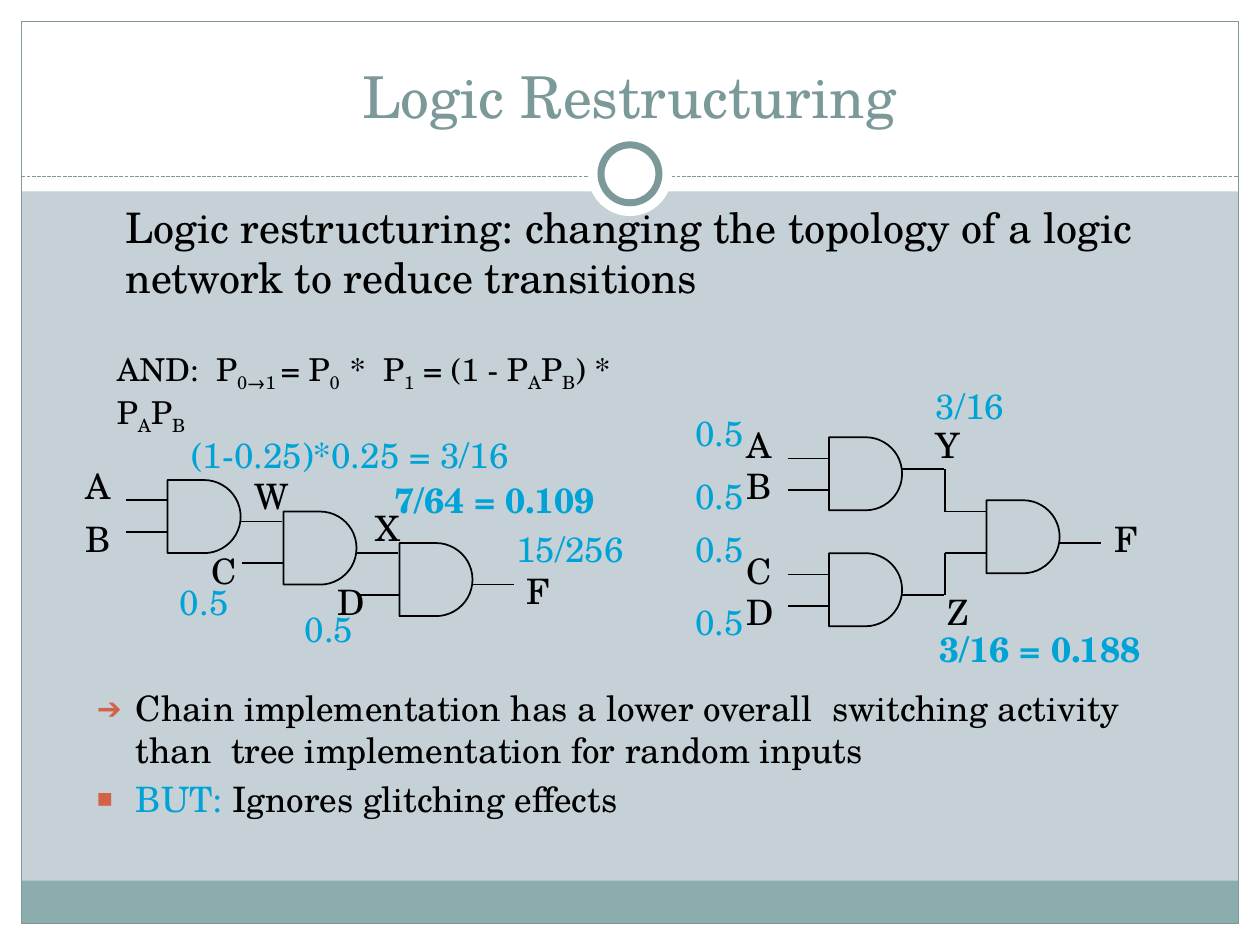
from dataclasses import dataclass

from lxml import etree
from pptx import Presentation
from pptx import util as u
from pptx.dml.color import RGBColor
from pptx.enum import dml, shapes, text
from pptx.oxml.ns import qn

Inches = u.Inches


@dataclass(frozen=True)
class Theme:
    font: str = "TeX Gyre Schola"
    paper: str = "C5D1D7"
    white: str = "FFFFFF"
    band: str = "8CADAE"
    frame: str = "7C999A"
    ink: str = "000000"
    accent: str = "00A3D6"
    bullet: str = "D16349"
    title: int = 33
    lead: int = 24
    body: int = 20
    formula: int = 18
    thin: float = 0.75
    wire: float = 1
    ring: float = 4


T = Theme()
GATE = 0.58
LEAD = 0.33


def rgb(value):
    return RGBColor.from_string(value)


def add_shape(slide, kind, box, fill=None, line=None, width=T.thin):
    sp = slide.shapes.add_shape(kind, *map(Inches, box))
    sp.shadow.inherit = False
    if fill:
        sp.fill.solid()
        sp.fill.fore_color.rgb = rgb(fill)
    else:
        sp.fill.background()
    if line:
        sp.line.color.rgb = rgb(line)
        sp.line.width = u.Pt(width)
    else:
        sp.line.fill.background()
    return sp


def add_line(slide, x1, y1, x2, y2, color=T.ink, width=T.wire):
    cx = slide.shapes.add_connector(
        shapes.MSO_CONNECTOR.STRAIGHT, *map(Inches, (x1, y1, x2, y2)))
    cx.line.color.rgb = rgb(color)
    cx.line.width = u.Pt(width)
    etree.SubElement(cx._element.spPr, qn("a:effectLst"))
    return cx


def add_text_frame(slide, box, wrap=True):
    tf = slide.shapes.add_textbox(*map(Inches, box)).text_frame
    tf.word_wrap = wrap
    return tf


def add_run(p, words, size, color=T.ink, bold=False):
    r = p.add_run()
    r.text = words
    r.font.name = T.font
    r.font.size = u.Pt(size)
    r.font.color.rgb = rgb(color)
    r.font.bold = bold
    return r


def set_indent(p, hanging=0, bullet=None, scale=100):
    pPr = p._p.get_or_add_pPr()
    pPr.set("marL", str(Inches(0.31)))
    pPr.set("indent", str(-Inches(hanging)))
    if bullet:
        color = etree.SubElement(pPr, qn("a:buClr"))
        etree.SubElement(color, qn("a:srgbClr"), val=T.bullet)
        etree.SubElement(pPr, qn("a:buSzPct"), val=str(scale * 1000))
        etree.SubElement(pPr, qn("a:buFont"), typeface=T.font)
        etree.SubElement(pPr, qn("a:buChar"), char=bullet)


def add_names(slide, left, top, names):
    for name, x, y in names:
        tf = add_text_frame(slide, (left + x, top + y, 0.4, 0.43), wrap=False)
        add_run(tf.paragraphs[0], name, T.body)


def add_values(slide, left, top, values):
    for value, x, y, w, bold in values:
        tf = add_text_frame(slide, (left + x, top + y, w, 0.43))
        add_run(tf.paragraphs[0], value, T.body, T.accent, bold)


def add_gate(slide, x, y, inputs, output):
    add_shape(slide, shapes.MSO_SHAPE.FLOWCHART_DELAY, (x, y, GATE, GATE),
              line=T.ink, width=T.wire)
    for dy in inputs:
        add_line(slide, x - LEAD, y + dy, x, y + dy)
    add_line(slide, x + GATE, y + output, x + GATE + LEAD, y + output)


def add_frame(slide, box):
    left, top, width, height = box
    right, bottom = left + width, top + height
    rect, oval = shapes.MSO_SHAPE.RECTANGLE, shapes.MSO_SHAPE.OVAL
    edge, head = 0.17, 1.52
    for part in ((left, bottom - edge, width, edge), (left, top, width, head),
                 (left, top, edge, height), (right - edge, top, edge, height)):
        add_shape(slide, rect, part, T.white)
    inner = width - 2 * edge
    add_shape(slide, rect, (left + edge, bottom - edge - 0.34, inner, 0.34), T.band)
    add_shape(slide, rect, (left + edge, top + edge, inner, height - 2 * edge),
              line=T.frame)
    rule = add_line(slide, left + edge, top + 1.4, right - edge, top + 1.4,
                    T.frame, T.thin)
    rule.line.dash_style = dml.MSO_LINE.SQUARE_DOT
    for size, line in ((0.67, None), (0.46, T.frame)):
        spot = (left + (width - size) / 2, top + 1.38 - size / 2, size, size)
        add_shape(slide, oval, spot, T.white, line, T.ring)


def add_title(slide, box):
    tf = add_text_frame(slide, box)
    tf.vertical_anchor = text.MSO_ANCHOR.BOTTOM
    p = tf.paragraphs[0]
    p.alignment = text.PP_ALIGN.CENTER
    add_run(p, "Logic Restructuring", T.title, T.frame)


def add_lead(slide, box):
    p = add_text_frame(slide, box).paragraphs[0]
    set_indent(p)
    add_run(p, "Logic restructuring: changing the topology of a logic "
               "network to reduce transitions", T.lead)


def add_formula(slide, box):
    p = add_text_frame(slide, box).paragraphs[0]
    parts = (("AND:  P", "0→1 "), ("= P", "0  "), ("*  P", "1"), (" = (1 - P", "A"),
             ("P", "B"), (") * P", "A"), ("P", "B"))
    for base, subscript in parts:
        add_run(p, base, T.formula)
        r = add_run(p, subscript, T.formula)
        r.font._element.set("baseline", "-25000")


def add_chain(slide, box):
    left, top = box[:2]
    for i in range(3):
        inputs = (0.41,) if i else (0.16, 0.41)
        add_gate(slide, left + 0.75 + 0.92 * i, top + 0.42 + 0.25 * i, inputs, 0.33)
    add_names(slide, left, top, (
        ("A", 0, 0.25), ("B", 0, 0.67), ("C", 1, 0.92), ("D", 2, 1.17),
        ("F", 3.5, 1.08), ("W", 1.34, 0.33), ("X", 2.3, 0.58)))
    add_values(slide, left, top, (
        ("(1-0.25)*0.25 = 3/16", 0.84, 0, 3.08, False),
        ("0.5", 0.75, 1.17, 0.75, False), ("0.5", 1.74, 1.38, 0.75, False),
        ("7/64 = 0.109", 2.45, 0.36, 2.05, True),
        ("15/256", 3.42, 0.75, 1.08, False)))


def add_tree(slide, box):
    left, top = box[:2]
    gate_x, joint_x = left + 1.16, left + 2.08
    for y, output, entry in ((0.47, 0.25, 1.06), (1.39, 0.33, 1.39)):
        add_gate(slide, gate_x, top + y, (0.17, 0.42), output)
        add_line(slide, joint_x, top + y + output, joint_x, top + entry)
    add_gate(slide, joint_x + LEAD, top + 0.97, (0.09, 0.42), 0.34)
    add_names(slide, left, top, (
        ("A", 0.41, 0.31), ("B", 0.41, 0.64), ("C", 0.41, 1.31), ("D", 0.41, 1.64),
        ("Y", 1.91, 0.31), ("Z", 2, 1.64), ("F", 3.33, 1.06)))
    add_values(slide, left, top, [
        ("0.5", 0, y, 0.75, False) for y in (0.22, 0.72, 1.14, 1.72)])
    add_values(slide, left, top, (
        ("3/16", 1.91, 0, 1.08, False), ("3/16 = 0.188", 1.94, 1.93, 2.15, True)))


def add_conclusions(slide, box):
    tf = add_text_frame(slide, box)
    p = tf.paragraphs[0]
    set_indent(p, 0.31, "➔", 85)
    add_run(p, "Chain implementation has a lower overall  switching activity "
               "than  tree implementation for random inputs", T.body)
    p = tf.add_paragraph()
    p.space_before = u.Pt(4)
    set_indent(p, 0.31, "▪")
    add_run(p, "BUT: ", T.body, T.accent)
    add_run(p, "Ignores glitching effects", T.body)


def main():
    prs = Presentation()
    prs.slide_width, prs.slide_height = Inches(10), Inches(7.5)
    slide = prs.slides.add_slide(prs.slide_layouts[6])
    slide.background.fill.solid()
    slide.background.fill.fore_color.rgb = rgb(T.paper)
    add_frame(slide, (0, 0, 10, 7.5))
    add_title(slide, (0.33, 0.25, 9.33, 0.83))
    add_conclusions(slide, (0.67, 5.4, 9, 1.39))
    add_lead(slide, (0.59, 1.55, 8.5, 0.92))
    add_chain(slide, (0.58, 3.39, 4.5, 1.81))
    add_tree(slide, (5.42, 3, 4.09, 2.36))
    add_formula(slide, (0.83, 2.73, 4.5, 0.75))
    prs.save("out.pptx")


if __name__ == "__main__":
    main()
